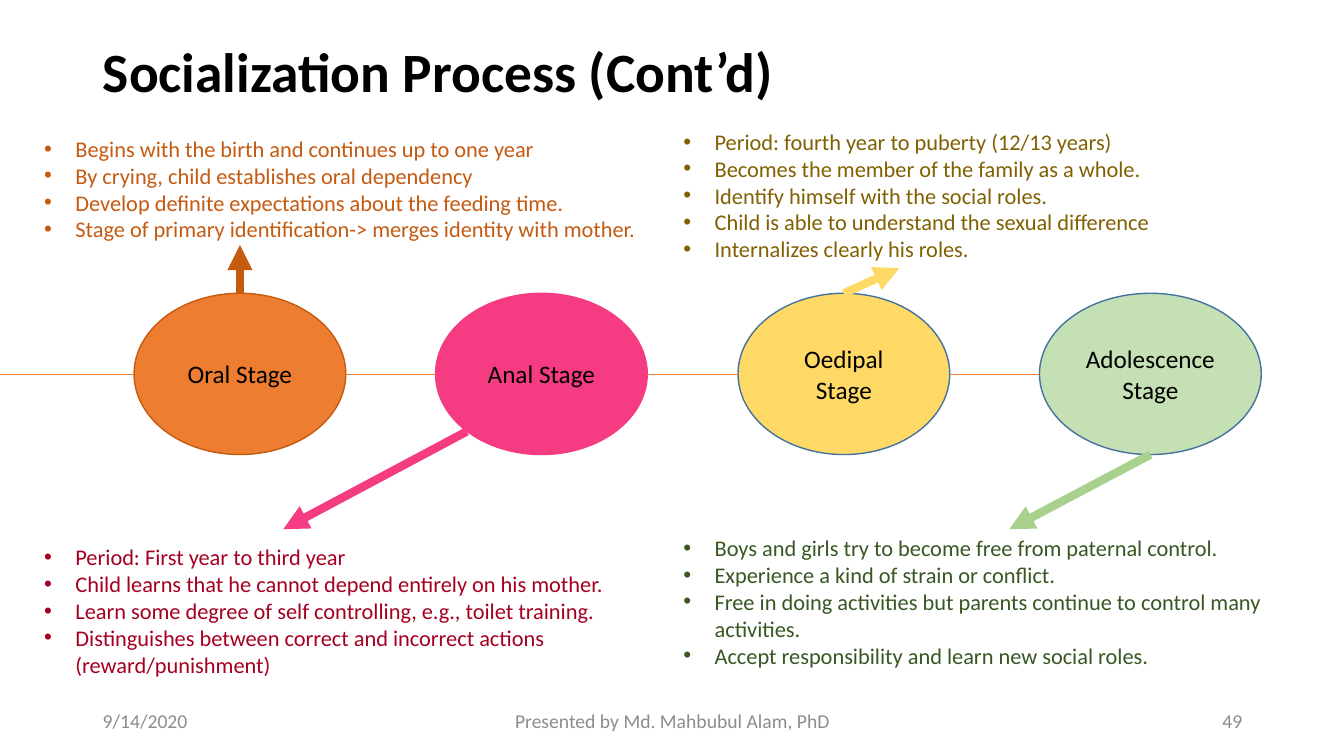
from dataclasses import dataclass
from lxml.etree import SubElement
from pptx import Presentation
from pptx.dml.color import RGBColor
from pptx.enum.shapes import MSO_CONNECTOR, MSO_SHAPE
from pptx.enum.text import MSO_ANCHOR, MSO_AUTO_SIZE, PP_ALIGN
from pptx.oxml.ns import qn
from pptx.util import Inches, Pt


@dataclass(frozen=True)
class Theme:
    font: str = "Calibri"
    black: str = "000000"
    gray: str = "8C8C8C"
    rail: str = "ED7D31"
    head: float = 39.6
    label: float = 18
    body: float = 16
    foot: float = 14


theme = Theme()

title = "Socialization Process (Cont’d)"

stages = [
    dict(name=["Oral Stage"], width=2.1, fill="ED7D31", edge="C55A11",
         arrow="C55A11", start=(2.38, 2.91), tip=(2.38, 2.43),
         ink="C55A11", notes=(0.34, 1.29, 1.18), points=[
             "Begins with the birth and continues up to one year",
             "By crying, child establishes oral dependency",
             "Develop definite expectations about the feeding time.",
             "Stage of primary identification-> merges identity with mother."]),
    dict(name=["Anal Stage"], width=2.1, fill="F53B82", edge="F53B82",
         arrow="F53B82", start=(4.63, 4.28), tip=(2.81, 5.25),
         ink="A50021", notes=(0.34, 5.34, 1.45), points=[
             "Period: First year to third year",
             "Child learns that he cannot depend entirely on his mother.",
             "Learn some degree of self controlling, e.g., toilet training.",
             "Distinguishes between correct and incorrect actions (reward/punishment)"]),
    dict(name=["Oedipal Stage"], width=2.1, fill="FFD966", edge="43739E",
         arrow="FFD966", start=(8.37, 2.91), tip=(8.92, 2.66),
         ink="806000", notes=(6.68, 1.22, 1.45), points=[
             "Period: fourth year to puberty (12/13 years)",
             "Becomes the member of the family as a whole.",
             "Identify himself with the social roles.",
             "Child is able to understand the sexual difference",
             "Internalizes clearly his roles."]),
    dict(name=["Adolescence", "Stage"], width=2.2, fill="C5E0B4", edge="43739E",
         arrow="A9D18E", start=(11.41, 4.51), tip=(10.01, 5.25),
         ink="385723", notes=(6.68, 5.25, 1.45), points=[
             "Boys and girls try to become free from paternal control.",
             "Experience a kind of strain or conflict.",
             "Free in doing activities but parents continue to control many activities.",
             "Accept responsibility and learn new social roles."]),
]

footer = [
    ("9/14/2020", 0.92, 3, PP_ALIGN.LEFT),
    ("Presented by Md. Mahbubul Alam, PhD", 4.42, 4.5, PP_ALIGN.CENTER),
    ("49", 9.42, 3, PP_ALIGN.RIGHT),
]

first, pitch, top, tall = 1.33, 2.993, 2.91, 1.6
middle = top + tall / 2


def write(shape, lines, size, color, align=PP_ALIGN.LEFT, bold=False,
          anchor=MSO_ANCHOR.MIDDLE, bullet=False, spacing=None):
    frame = shape.text_frame
    frame.word_wrap = True
    frame.auto_size = MSO_AUTO_SIZE.NONE
    frame.vertical_anchor = anchor
    for i, line in enumerate(lines):
        para = frame.add_paragraph() if i else frame.paragraphs[0]
        para.alignment = align
        if spacing:
            para.line_spacing = spacing
        run = para.add_run()
        run.text = line
        font = run.font
        font.name, font.size, font.bold = theme.font, Pt(size), bold
        font.color.rgb = RGBColor.from_string(color)
        if bullet:
            props = para._p.get_or_add_pPr()
            props.set("marL", str(Inches(0.31)))
            props.set("indent", str(-Inches(0.31)))
            SubElement(props, qn("a:buFont"), typeface="Arial")
            SubElement(props, qn("a:buChar"), char="•")


def link(slide, start, end, color, width, arrow=False):
    ends = [Inches(v) for v in (*start, *end)]
    line = slide.shapes.add_connector(MSO_CONNECTOR.STRAIGHT, *ends)
    line.line.color.rgb = RGBColor.from_string(color)
    line.line.width = Pt(width)
    if arrow:
        SubElement(line.line._get_or_add_ln(), qn("a:tailEnd"), type="triangle")
    SubElement(line._element.spPr, qn("a:effectLst"))
    return line


def box(slide, *place):
    return slide.shapes.add_textbox(*[Inches(v) for v in place])


def main():
    deck = Presentation()
    deck.slide_width, deck.slide_height = Inches(13.33), Inches(7.5)
    slide = deck.slides.add_slide(deck.slide_layouts[5])

    head = slide.shapes.title
    head.left, head.top = Inches(0.92), Inches(0.4)
    head.width, head.height = Inches(11.5), Inches(0.68)
    write(head, [title], theme.head, theme.black, bold=True, spacing=0.9)

    for text, left, width, align in footer:
        write(box(slide, left, 6.95, width, 0.4), [text],
              theme.foot, theme.gray, align=align)

    edge = 0
    for i, stage in enumerate(stages):
        left = round(first + i * pitch, 2)
        place = [Inches(v) for v in (left, top, stage["width"], tall)]
        oval = slide.shapes.add_shape(MSO_SHAPE.OVAL, *place)
        oval.shadow.inherit = False
        oval.fill.solid()
        oval.fill.fore_color.rgb = RGBColor.from_string(stage["fill"])
        oval.line.color.rgb = RGBColor.from_string(stage["edge"])
        oval.line.width = Pt(1)
        write(oval, stage["name"], theme.label, theme.black,
              align=PP_ALIGN.CENTER)

        link(slide, (edge, middle), (left, middle), theme.rail, 0.5)
        edge = left + stage["width"]

        x, y, height = stage["notes"]
        write(box(slide, x, y, 6.66, height), stage["points"], theme.body,
              stage["ink"], anchor=MSO_ANCHOR.TOP, bullet=True)
        arrow = link(slide, stage["start"], stage["tip"], stage["arrow"], 6,
                     arrow=True)
        if stage["start"][1] == top:
            arrow.begin_connect(oval, 0)

    deck.save("out.pptx")


if __name__ == "__main__":
    main()
